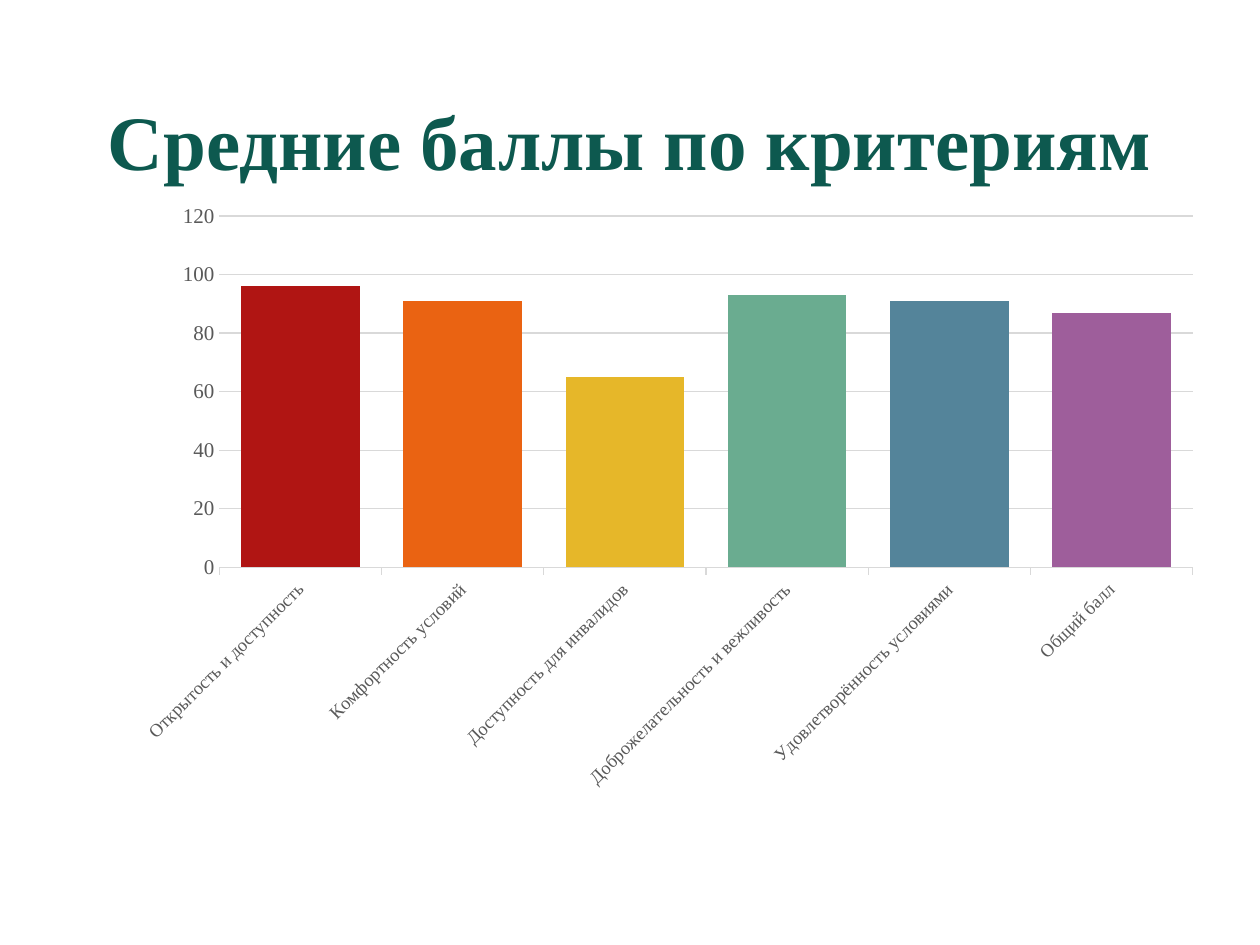
from pptx import Presentation
from pptx.chart.data import CategoryChartData
from pptx.dml.color import RGBColor
from pptx.enum.chart import XL_CHART_TYPE, XL_TICK_MARK
from pptx.enum.text import MSO_ANCHOR, PP_ALIGN
from pptx.oxml.ns import qn
from pptx.util import Inches, Pt

COLUMNS = XL_CHART_TYPE.COLUMN_CLUSTERED
TICK_NONE, TICK_OUT = XL_TICK_MARK.NONE, XL_TICK_MARK.OUTSIDE
CENTER, MIDDLE = PP_ALIGN.CENTER, MSO_ANCHOR.MIDDLE

FONT = "Times New Roman"
TEAL = RGBColor(0x0D, 0x59, 0x4F)
BLACK = RGBColor(0x00, 0x00, 0x00)
LABEL_GRAY = RGBColor(0x59, 0x59, 0x59)
GRID_GRAY = RGBColor(0xD9, 0xD9, 0xD9)
RED = RGBColor(0xB0, 0x15, 0x13)
ORANGE = RGBColor(0xEA, 0x63, 0x12)
YELLOW = RGBColor(0xE6, 0xB7, 0x29)
GREEN = RGBColor(0x6A, 0xAC, 0x90)
BLUE = RGBColor(0x54, 0x84, 0x9A)
PURPLE = RGBColor(0x9E, 0x5E, 0x9B)

SCORES = [
    ("Открытость и доступность", 96, RED),
    ("Комфортность условий", 91, ORANGE),
    ("Доступность для инвалидов", 65, YELLOW),
    ("Доброжелательность и вежливость", 93, GREEN),
    ("Удовлетворённость условиями", 91, BLUE),
    ("Общий балл", 87, PURPLE),
]


def set_format(target, values):
    for name, value in values.items():
        setattr(target, name, value)


def set_font(font, size, color, bold=False):
    set_format(font, {"name": FONT, "size": Pt(size), "bold": bold})
    font.color.rgb = color


def set_line(line, color):
    line.color.rgb = color
    line.width = Pt(0.75)


def place(box):
    return dict(zip(("left", "top", "width", "height"), map(Inches, box)))


def add_title(page, box, text):
    title = page.shapes.title
    set_format(title, place(box))
    frame = title.text_frame
    set_format(frame, {"text": text, "word_wrap": True, "vertical_anchor": MIDDLE})
    para = frame.paragraphs[0]
    set_format(para, {"alignment": CENTER, "line_spacing": 1.5,
                      "space_before": Pt(0), "space_after": Pt(3)})
    set_font(para.runs[0].font, 44, TEAL, bold=True)


def tilt_category_labels(chart, degrees):
    tags = ("c:catAx", "c:txPr", "a:bodyPr")
    label_body = chart.element.find(".//" + "/".join(map(qn, tags)))
    label_body.set("rot", str(degrees * 60000))
    label_body.set("vert", "horz")


def add_score_chart(page, box, scores):
    data = CategoryChartData()
    data.categories = [name for name, _, _ in scores]
    data.add_series("Series 1", [value for _, value, _ in scores])
    chart = page.shapes.add_chart(COLUMNS, *place(box).values(), data).chart
    set_format(chart, {"has_legend": False, "has_title": False})
    set_font(chart.font, 12, BLACK)

    plot = chart.plots[0]
    set_format(plot, {"gap_width": 37, "overlap": -27, "vary_by_categories": False})
    for index, (_, _, color) in enumerate(scores):
        fill = plot.series[0].points[index].format.fill
        fill.solid()
        fill.fore_color.rgb = color

    criteria = chart.category_axis
    set_format(criteria, {"major_tick_mark": TICK_OUT, "minor_tick_mark": TICK_NONE,
                          "has_major_gridlines": False})
    set_font(criteria.tick_labels.font, 10.5, LABEL_GRAY)
    set_line(criteria.format.line, GRID_GRAY)
    tilt_category_labels(chart, -45)

    points = chart.value_axis
    set_format(points, {"minimum_scale": 0, "maximum_scale": 120, "major_unit": 20,
                        "major_tick_mark": TICK_NONE, "minor_tick_mark": TICK_NONE,
                        "has_major_gridlines": True})
    set_font(points.tick_labels.font, 12, LABEL_GRAY)
    set_line(points.major_gridlines.format.line, GRID_GRAY)
    points.format.line.fill.background()


def main():
    deck = Presentation()
    set_format(deck, {"slide_width": Inches(10), "slide_height": Inches(7.5)})
    page = deck.slides.add_slide(deck.slide_layouts[5])
    add_title(page, (0.5, 0.3, 9, 1.25), "Средние баллы по критериям")
    add_score_chart(page, (0.98, 1.53, 8.66, 4.82), SCORES)
    deck.save("out.pptx")


if __name__ == "__main__":
    main()
